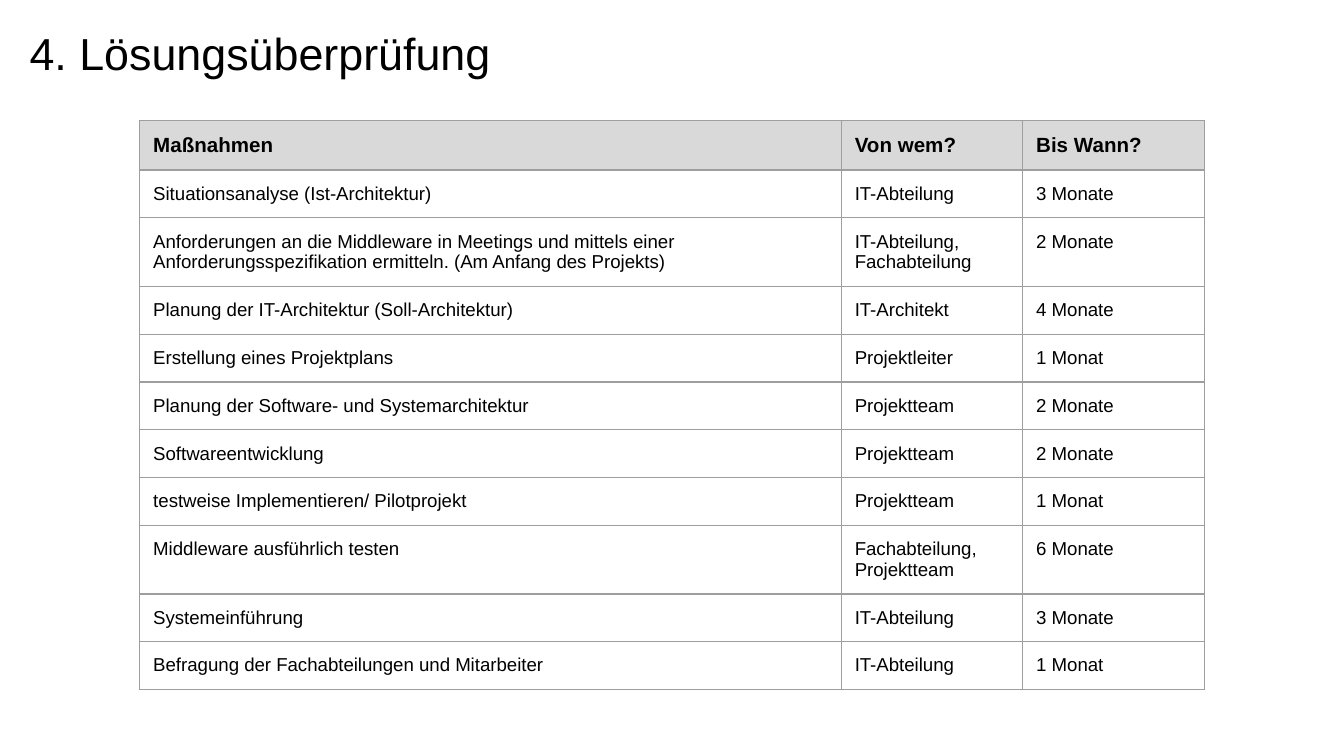
from dataclasses import dataclass
from typing import NamedTuple

from lxml import etree
from pptx import Presentation
from pptx.dml.color import RGBColor
from pptx.enum.text import MSO_ANCHOR, PP_ALIGN
from pptx.oxml.ns import qn
from pptx.util import Inches, Pt

TOP = MSO_ANCHOR.TOP
LEFT = PP_ALIGN.LEFT
WIDE = 10
HIGH = WIDE * 9 / 16


@dataclass(frozen=True)
class Theme:
    font: str = "Arial"
    ink: str = "000000"
    head: str = "D9D9D9"
    rule: str = "9E9E9E"
    line: float = 0.75
    title: int = 24
    label: int = 11
    body: int = 10
    pad: float = 0.1


class Task(NamedTuple):
    step: str
    owner: str
    due: str
    high: float = 0.33


class Box(NamedTuple):
    left: float
    top: float
    width: float
    height: float


THEME = Theme()
TITLE = Box(0.012, 0.016, 0.932, 0.101)
GRID = Box(0.104, 0.159, 0.792, 0.703)
COLS = (5.22, 1.35, 1.35)
TASKS = (
    Task("Maßnahmen", "Von wem?", "Bis Wann?", 0.37),
    Task("Situationsanalyse (Ist-Architektur)", "IT-Abteilung", "3 Monate"),
    Task(
        "Anforderungen an die Middleware in Meetings und mittels einer "
        "Anforderungsspezifikation ermitteln. (Am Anfang des Projekts)",
        "IT-Abteilung, Fachabteilung", "2 Monate", 0.47,
    ),
    Task("Planung der IT-Architektur (Soll-Architektur)", "IT-Architekt", "4 Monate"),
    Task("Erstellung eines Projektplans", "Projektleiter", "1 Monat"),
    Task("Planung der Software- und Systemarchitektur", "Projektteam", "2 Monate"),
    Task("Softwareentwicklung", "Projektteam", "2 Monate"),
    Task("testweise Implementieren/ Pilotprojekt", "Projektteam", "1 Monat"),
    Task("Middleware ausführlich testen", "Fachabteilung, Projektteam", "6 Monate", 0.47),
    Task("Systemeinführung", "IT-Abteilung", "3 Monate"),
    Task("Befragung der Fachabteilungen und Mitarbeiter", "IT-Abteilung", "1 Monat"),
)


def place(box: Box) -> tuple:
    return (
        Inches(box.left * WIDE), Inches(box.top * HIGH),
        Inches(box.width * WIDE), Inches(box.height * HIGH),
    )


def style(frame, size: int, bold: bool = False) -> None:
    for para in frame.paragraphs:
        para.alignment = LEFT
        for run in para.runs:
            run.font.name = THEME.font
            run.font.size = Pt(size)
            run.font.bold = bold
            run.font.color.rgb = RGBColor.from_string(THEME.ink)


def pad(item) -> None:
    item.margin_left = item.margin_right = Inches(THEME.pad)
    item.margin_top = item.margin_bottom = Inches(THEME.pad)
    item.vertical_anchor = TOP


def edge(cell) -> None:
    props = cell._tc.get_or_add_tcPr()
    for side in ("lnL", "lnR", "lnT", "lnB"):
        line = etree.SubElement(props, qn(f"a:{side}"), w=str(Pt(THEME.line)))
        fill = etree.SubElement(line, qn("a:solidFill"))
        etree.SubElement(fill, qn("a:srgbClr"), val=THEME.rule)


def write(cell, text: str, head: bool) -> None:
    pad(cell)
    edge(cell)
    if head:
        cell.fill.solid()
        cell.fill.fore_color.rgb = RGBColor.from_string(THEME.head)
    else:
        cell.fill.background()
    cell.text_frame.text = text
    style(cell.text_frame, THEME.label if head else THEME.body, head)


def add_title(slide, text: str) -> None:
    title = slide.shapes.title
    title.left, title.top, title.width, title.height = place(TITLE)
    frame = title.text_frame
    pad(frame)
    frame.word_wrap = True
    frame.text = text
    style(frame, THEME.title)


def add_plan(slide) -> None:
    table = slide.shapes.add_table(len(TASKS), len(COLS), *place(GRID)).table
    table.horz_banding = False
    for col, width in zip(table.columns, COLS):
        col.width = Inches(width)
    for index, task in enumerate(TASKS):
        table.rows[index].height = Inches(task.high)
        for cell, text in zip(table.rows[index].cells, task[:3]):
            write(cell, text, index == 0)


def main() -> None:
    deck = Presentation()
    deck.slide_width, deck.slide_height = Inches(WIDE), Inches(HIGH)
    slide = deck.slides.add_slide(deck.slide_layouts[5])
    add_plan(slide)
    add_title(slide, "4. Lösungsüberprüfung")
    deck.save("out.pptx")


if __name__ == "__main__":
    main()
